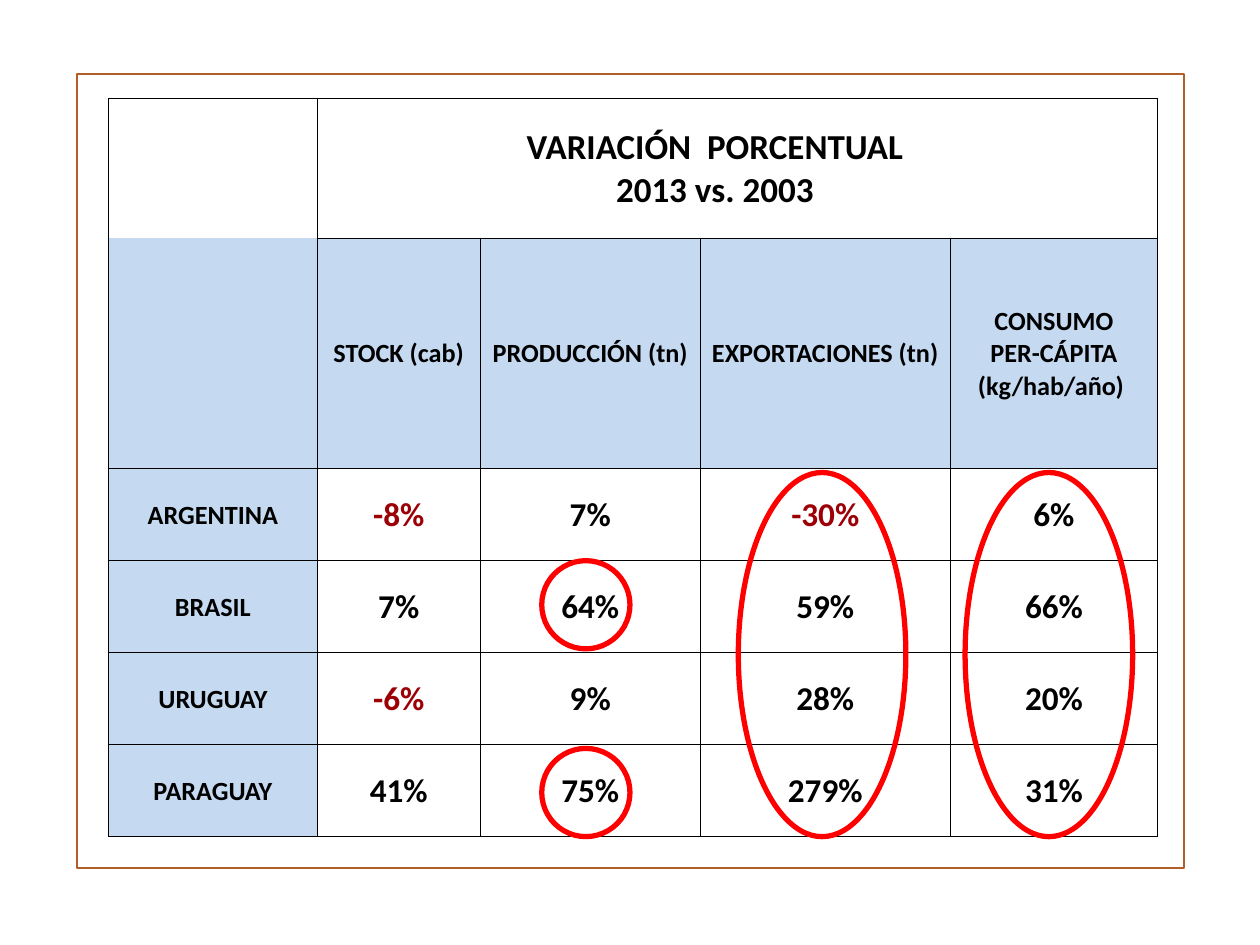
"""Build a slide comparing cattle sector changes in four countries, 2013 vs. 2003."""
from dataclasses import dataclass

from lxml import etree
from pptx import Presentation
from pptx.dml.color import RGBColor
from pptx.enum.shapes import MSO_SHAPE
from pptx.enum.text import MSO_ANCHOR, PP_ALIGN
from pptx.oxml.ns import qn
from pptx.util import Inches, Pt

RECT, OVAL = MSO_SHAPE.RECTANGLE, MSO_SHAPE.OVAL
MIDDLE, CENTER = MSO_ANCHOR.MIDDLE, PP_ALIGN.CENTER

COLORS = {
    "text": "000000",
    "negative": "9C0006",
    "header": "C5D9F1",
    "frame": "B15E28",
    "mark": "FF0000",
}
FONT = "Calibri"
COL_WIDTHS = [1.66, 1.29, 1.75, 1.98, 1.65]
ROW_HEIGHTS = [1.11, 1.83] + [0.73] * 4
ROWS = [
    ["", "", "VARIACIÓN  PORCENTUAL\n2013 vs. 2003", "", ""],
    ["", "STOCK (cab)", "PRODUCCIÓN (tn)", " EXPORTACIONES (tn) ",
     " CONSUMO \nPER-CÁPITA (kg/hab/año) "],
    ["ARGENTINA", "-8%", "7%", "-30%", "6%"],
    ["BRASIL", "7%", "64%", "59%", "66%"],
    ["URUGUAY", "-6%", "9%", "28%", "20%"],
    ["PARAGUAY", "41%", "75%", "279%", "31%"],
]
OPEN_BORDERS = {
    (0, 0): "LRT", (0, 1): "LTB", (0, 2): "TB", (0, 3): "TB", (0, 4): "RTB",
    (1, 0): "LRB",
}


@dataclass
class Outline:
    kind: MSO_SHAPE
    left: float
    top: float
    width: float
    height: float
    color: str = "mark"
    weight: float = 3


FRAME = Outline(RECT, 0.61, 0.59, 8.79, 6.3, "frame", 1.25)
MARKS = [
    Outline(OVAL, 4.3, 5.94, 0.7, 0.7),
    Outline(OVAL, 4.3, 4.45, 0.7, 0.7),
    Outline(OVAL, 7.66, 3.75, 1.33, 2.89),
    Outline(OVAL, 5.86, 3.75, 1.33, 2.89),
]


def rgb(name: str) -> RGBColor:
    return RGBColor.from_string(COLORS[name])


def draw_outline(s, o: Outline) -> None:
    sp = s.shapes.add_shape(
        o.kind, Inches(o.left), Inches(o.top), Inches(o.width), Inches(o.height))
    sp.shadow.inherit = False
    sp.fill.background()
    sp.line.color.rgb = rgb(o.color)
    sp.line.width = Pt(o.weight)


def set_borders(cell, sides: str) -> None:
    tc_pr = cell._tc.get_or_add_tcPr()
    for i, side in enumerate("LRTB"):
        ln = etree.Element(qn(f"a:ln{side}"), w=str(Pt(0.5)))
        if side in sides:
            fill = etree.SubElement(ln, qn("a:solidFill"))
            etree.SubElement(fill, qn("a:srgbClr"), val=COLORS["text"])
        else:
            etree.SubElement(ln, qn("a:noFill"))
        tc_pr.insert(i, ln)


def fill_cell(cell, text: str, row: int, col: int) -> None:
    cell.margin_left = cell.margin_right = cell.margin_top = Inches(0.01)
    cell.margin_bottom = 0
    cell.vertical_anchor = MIDDLE
    is_header = row == 1 or (row > 1 and col == 0)
    if is_header:
        cell.fill.solid()
        cell.fill.fore_color.rgb = rgb("header")
    else:
        cell.fill.background()
    set_borders(cell, OPEN_BORDERS.get((row, col), "LRTB"))
    if not text:
        return
    cell.text_frame.text = text
    size = 20 if row == 0 else 15 if is_header else 19
    for p in cell.text_frame.paragraphs:
        p.alignment = CENTER
        for r in p.runs:
            r.font.name = FONT
            r.font.size = Pt(size)
            r.font.bold = True
            r.font.color.rgb = rgb("negative" if text.startswith("-") else "text")


def draw_table(s) -> None:
    table = s.shapes.add_table(
        len(ROWS), len(COL_WIDTHS), Inches(0.86), Inches(0.78),
        Inches(sum(COL_WIDTHS)), Inches(sum(ROW_HEIGHTS))).table
    table.first_row = table.horz_banding = False
    for column, width in zip(table.columns, COL_WIDTHS):
        column.width = Inches(width)
    for row, height in zip(table.rows, ROW_HEIGHTS):
        row.height = Inches(height)
    for i, texts in enumerate(ROWS):
        for j, text in enumerate(texts):
            fill_cell(table.cell(i, j), text, i, j)
    table.cell(0, 2).merge(table.cell(0, 3))


def main() -> None:
    prs = Presentation()
    prs.slide_width, prs.slide_height = Inches(10), Inches(7.5)
    s = prs.slides.add_slide(prs.slide_layouts[6])
    draw_outline(s, FRAME)
    draw_table(s)
    for mark in MARKS:
        draw_outline(s, mark)
    prs.save("out.pptx")


if __name__ == "__main__":
    main()
